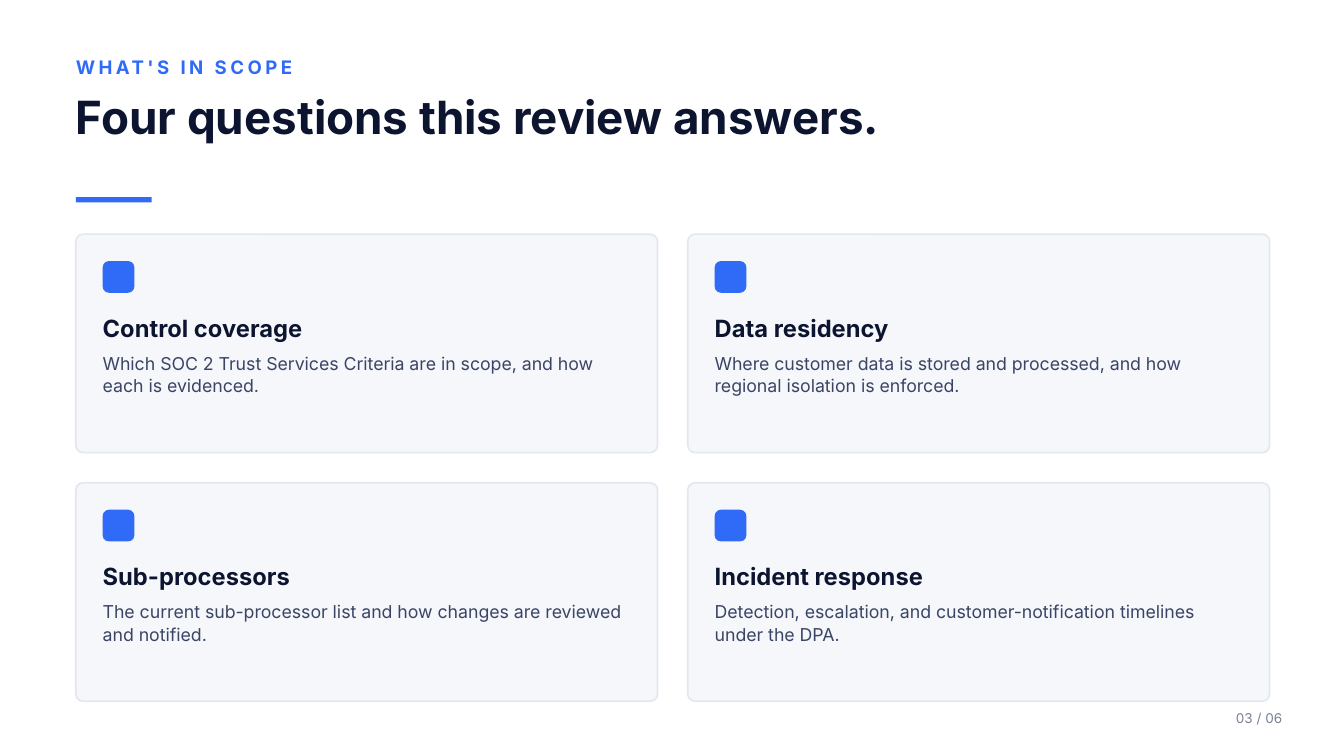
from pptx import Presentation
from pptx.dml.color import RGBColor
from pptx.enum.shapes import MSO_SHAPE as Shape
from pptx.enum.text import MSO_ANCHOR as Anchor, PP_ALIGN as Align
from pptx.util import Cm, Pt

EYEBROW = "WHAT'S IN SCOPE"
TITLE = "Four questions this review answers."
PAGE = "03 / 06"
QUESTIONS = [
    ("Control coverage",
     "Which SOC 2 Trust Services Criteria are in scope, and how each is evidenced."),
    ("Data residency",
     "Where customer data is stored and processed, and how regional isolation is enforced."),
    ("Sub-processors",
     "The current sub-processor list and how changes are reviewed and notified."),
    ("Incident response",
     "Detection, escalation, and customer-notification timelines under the DPA."),
]

FONT = "Inter"
BLUE, INK, SLATE, GREY = "2F6BF6", "0C1430", "3A4566", "7A8298"
CARD_FILL, CARD_LINE = "F5F7FB", "E3E7EF"

COLUMNS = 2
MARGIN = 1.58
CARD_TOP = 4.88
CARD_WIDTH, CARD_HEIGHT = 12.12, 4.55
GAP = 0.63
PADDING = 0.56
ICON = 0.66
HEADER_WIDTH = 24.84


def color(value):
    return RGBColor.from_string(value)


def add_box(slide, kind, left, top, width, height, fill, line=None, radius=None):
    shape = slide.shapes.add_shape(kind, Cm(left), Cm(top), Cm(width), Cm(height))
    shape.shadow.inherit = False
    shape.fill.solid()
    shape.fill.fore_color.rgb = color(fill)
    if line:
        shape.line.color.rgb = color(line)
        shape.line.width = Pt(1)
    else:
        shape.line.fill.background()
    if radius:
        shape.adjustments[0] = radius / min(width, height)


def add_text(slide, text, left, top, width, height, size, ink, bold=False,
             anchor=Anchor.MIDDLE, align=Align.LEFT, line_spacing=None, tracking=None):
    box = slide.shapes.add_textbox(Cm(left), Cm(top), Cm(width), Cm(height))
    frame = box.text_frame
    frame.margin_left = frame.margin_right = frame.margin_top = frame.margin_bottom = 0
    frame.word_wrap = True
    frame.vertical_anchor = anchor
    paragraph = frame.paragraphs[0]
    paragraph.alignment = align
    paragraph.line_spacing = line_spacing
    run = paragraph.add_run()
    run.text = text
    font = paragraph.font
    font.name, font.size, font.bold = FONT, Pt(size), bold
    font.color.rgb = color(ink)
    if tracking:
        run._r.get_or_add_rPr().set("spc", str(tracking * 100))


def add_card(slide, index, heading, body):
    row, column = divmod(index, COLUMNS)
    left = MARGIN + column * (CARD_WIDTH + GAP)
    top = CARD_TOP + row * (CARD_HEIGHT + GAP)
    inner_left = left + PADDING
    inner_width = CARD_WIDTH - 2 * PADDING
    add_box(slide, Shape.ROUNDED_RECTANGLE, left, top, CARD_WIDTH, CARD_HEIGHT,
            CARD_FILL, CARD_LINE, radius=0.15)
    add_box(slide, Shape.ROUNDED_RECTANGLE, inner_left, top + PADDING, ICON, ICON,
            BLUE, radius=0.13)
    add_text(slide, heading, inner_left, top + 1.52, inner_width, 0.86, 14, INK, bold=True)
    add_text(slide, body, inner_left, top + 2.44, inner_width, 1.8, 10.5, SLATE,
             anchor=Anchor.TOP, line_spacing=1.05)


def main():
    presentation = Presentation()
    presentation.slide_width, presentation.slide_height = Cm(28), Cm(15.75)
    slide = presentation.slides.add_slide(presentation.slide_layouts[6])
    add_text(slide, EYEBROW, MARGIN, 1.07, HEADER_WIDTH, 0.66, 11, BLUE, bold=True, tracking=2)
    add_text(slide, TITLE, MARGIN, 1.83, HEADER_WIDTH, 2.41, 27, INK, bold=True,
             anchor=Anchor.TOP, line_spacing=1.02)
    add_box(slide, Shape.RECTANGLE, MARGIN, 4.11, 1.58, 0.11, BLUE)
    for index, (heading, body) in enumerate(QUESTIONS):
        add_card(slide, index, heading, body)
    add_text(slide, PAGE, 24.18, 14.68, 2.54, 0.56, 8, GREY, align=Align.RIGHT)
    presentation.save("out.pptx")


if __name__ == "__main__":
    main()
